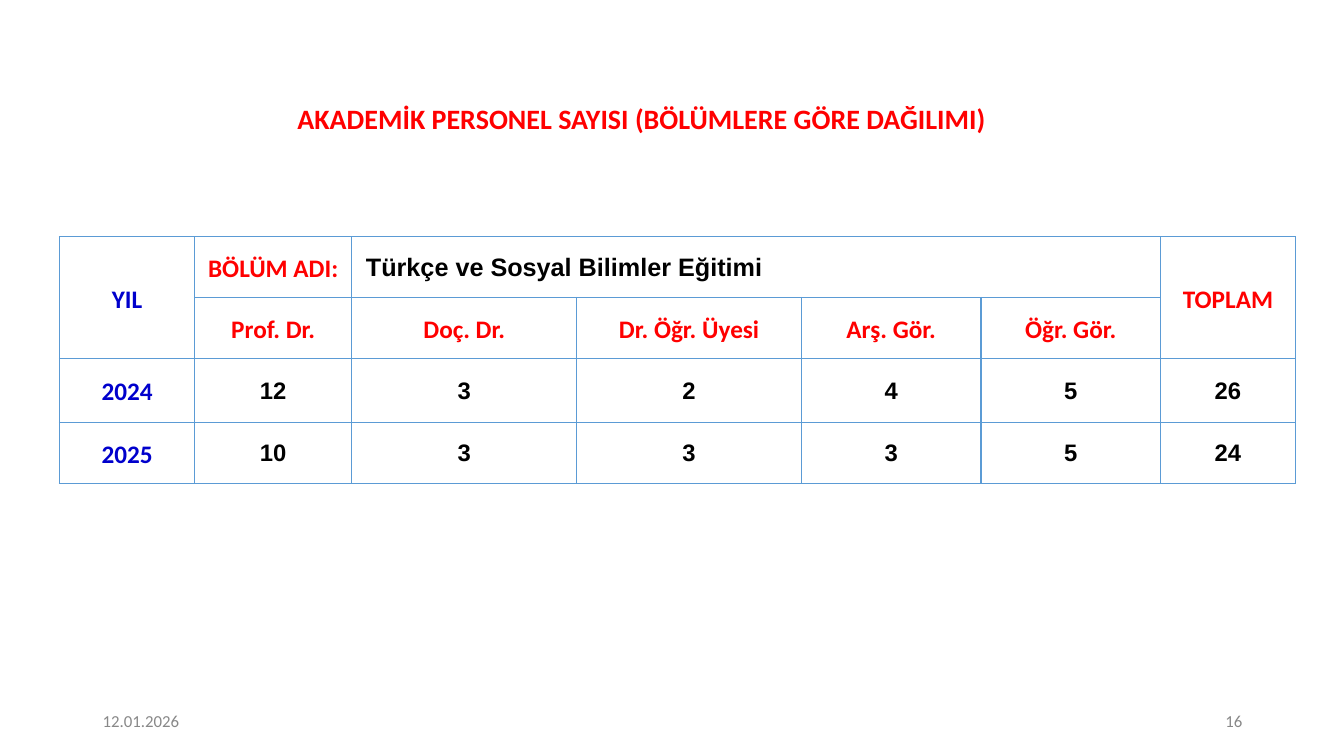
from lxml import etree
from pptx import Presentation
from pptx.dml.color import RGBColor
from pptx.enum.text import MSO_ANCHOR, PP_ALIGN
from pptx.oxml.ns import qn
from pptx.util import Inches, Pt

LEFT, CENTER, RIGHT = PP_ALIGN.LEFT, PP_ALIGN.CENTER, PP_ALIGN.RIGHT
MIDDLE = MSO_ANCHOR.MIDDLE

COLORS = {"red": "FF0000", "blue": "0000CC", "black": "000000",
          "gray": "888888", "border": "5B9BD5"}

HEADER = ["Prof. Dr.", "Doç. Dr.", "Dr. Öğr. Üyesi", "Arş. Gör.", "Öğr. Gör."]
STAFF = {"2024": [12, 3, 2, 4, 5], "2025": [10, 3, 3, 3, 5]}
COL_WIDTHS = [1.34, 1.56, 2.23, 2.23, 1.78, 1.78, 1.34]
ROW_HEIGHTS = [0.6, 0.61, 0.63, 0.61]


def write(tf, text, size=18, font="Calibri", color="black", bold=False,
          align=LEFT, spacing=1.0):
    tf.word_wrap = True
    p = tf.paragraphs[0]
    p.alignment = align
    p.line_spacing = spacing
    r = p.add_run()
    r.text = text
    r.font.size = Pt(size)
    r.font.name = font
    r.font.bold = bold
    r.font.color.rgb = RGBColor.from_string(COLORS[color])


class StaffSlide:
    label = dict(bold=True, align=CENTER, spacing=1.07)
    number = dict(size=17, font="Arial", bold=True, align=CENTER)

    def __init__(self, prs):
        self.s = prs.slides.add_slide(prs.slide_layouts[5])

    def title(self, text, x, y, w, h):
        sp = self.s.shapes.title
        sp.left, sp.top, sp.width, sp.height = map(Inches, (x, y, w, h))
        sp.text_frame.vertical_anchor = MIDDLE
        write(sp.text_frame, text, size=20, color="red", bold=True,
              align=CENTER, spacing=0.9)

    def footer(self, text, x, align):
        sp = self.s.shapes.add_textbox(Inches(x), Inches(6.95), Inches(3), Inches(0.4))
        sp.text_frame.vertical_anchor = MIDDLE
        write(sp.text_frame, text, size=12, color="gray", align=align)

    def cell(self, row, col, text, indent=0.01, **fmt):
        cell = self.table.cell(row, col)
        cell.margin_left = Inches(indent)
        write(cell.text_frame, text, **fmt)

    def borders(self, cell):
        tc_pr = cell._tc.get_or_add_tcPr()
        for side in ("a:lnL", "a:lnR", "a:lnT", "a:lnB"):
            ln = etree.SubElement(tc_pr, qn(side), w=str(Pt(1)))
            fill = etree.SubElement(ln, qn("a:solidFill"))
            etree.SubElement(fill, qn("a:srgbClr"), val=COLORS["border"])

    def grid(self, x, y, widths, heights):
        frame = self.s.shapes.add_table(
            len(heights), len(widths), Inches(x), Inches(y),
            Inches(sum(widths)), Inches(sum(heights)))
        self.table = frame.table
        self.table.first_row = self.table.horz_banding = False
        for col, w in zip(self.table.columns, widths):
            col.width = Inches(w)
        for row, h in zip(self.table.rows, heights):
            row.height = Inches(h)
        for cell in self.table.iter_cells():
            cell.margin_left = cell.margin_right = cell.margin_top = Inches(0.01)
            cell.margin_bottom = 0
            cell.vertical_anchor = MIDDLE
            self.borders(cell)
            cell.fill.background()

    def merge(self, first, last):
        self.table.cell(*first).merge(self.table.cell(*last))


def main():
    prs = Presentation()
    prs.slide_width, prs.slide_height = Inches(13.33), Inches(7.5)
    s = StaffSlide(prs)

    # Title and footer
    s.title("AKADEMİK PERSONEL SAYISI (BÖLÜMLERE GÖRE DAĞILIMI)", 0.71, 0.7, 11.31, 0.99)
    s.footer("12.01.2026", 0.92, LEFT)
    s.footer("16", 9.42, RIGHT)

    # Table heading
    s.grid(0.59, 2.35, COL_WIDTHS, ROW_HEIGHTS)
    s.merge((0, 0), (1, 0))
    s.merge((0, 2), (0, 5))
    s.merge((0, 6), (1, 6))
    s.cell(0, 0, "YIL", color="blue", **s.label)
    s.cell(0, 1, "BÖLÜM ADI:", color="red", **s.label)
    s.cell(0, 2, "Türkçe ve Sosyal Bilimler Eğitimi", indent=0.14, font="Arial", bold=True)
    s.cell(0, 6, "TOPLAM", color="red", **s.label)
    for col, rank in enumerate(HEADER, 1):
        s.cell(1, col, rank, color="red", **s.label)

    # Staff counts with the yearly total
    for row, (year, counts) in enumerate(STAFF.items(), 2):
        s.cell(row, 0, year, color="blue", **s.label)
        for col, count in enumerate(counts + [sum(counts)], 1):
            s.cell(row, col, str(count), **s.number)

    prs.save("out.pptx")


if __name__ == "__main__":
    main()
